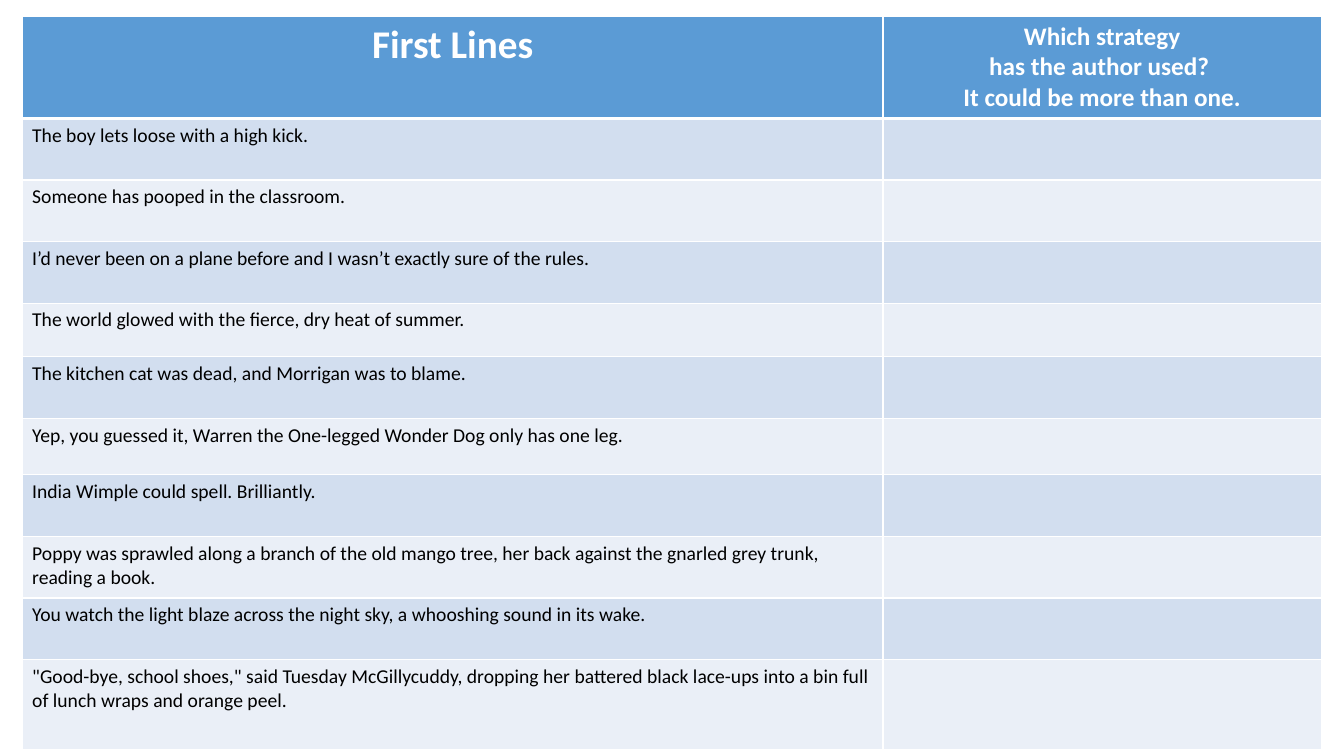
from dataclasses import dataclass

import pptx
import pptx.dml.color
import pptx.enum.text
import pptx.oxml
import pptx.oxml.ns
import pptx.table
import pptx.util

Pt = pptx.util.Pt


@dataclass(frozen=True)
class Theme:
    font: str = "Calibri"
    head: str = "5B9BD5"
    bands: tuple[str, str] = ("D2DEEF", "EAEFF7")
    white: str = "FFFFFF"
    black: str = "000000"
    title: int = 28
    label: int = 18
    body: int = 14
    thin: int = 1
    thick: int = 3


@dataclass(frozen=True)
class Style:
    fill: str
    ink: str
    size: int
    bold: bool = False
    center: bool = False
    top: int = 1
    bottom: int = 1


@dataclass(frozen=True)
class Line:
    text: str
    height: float = 44


THEME = Theme()
LEFT, TOP = 15.8, 11.5
WIDTHS = (615, 313)
HEAD = 73

TITLE = "First Lines"
PROMPT = "Which strategy\nhas the author used? \nIt could be more than one."
LINES = (
    Line("The boy lets loose with a high kick."),
    Line("Someone has pooped in the classroom."),
    Line("I’d never been on a plane before and I wasn’t exactly sure of the rules."),
    Line("The world glowed with the fierce, dry heat of summer.", 38.3),
    Line("The kitchen cat was dead, and Morrigan was to blame."),
    Line("Yep, you guessed it, Warren the One-legged Wonder Dog only has one leg.", 40.3),
    Line("India Wimple could spell. Brilliantly."),
    Line("Poppy was sprawled along a branch of the old mango tree, "
         "her back against the gnarled grey trunk, reading a book."),
    Line("You watch the light blaze across the night sky, a whooshing sound in its wake."),
    Line('"Good-bye, school shoes," said Tuesday McGillycuddy, dropping her battered '
         "black lace-ups into a bin full of lunch wraps and orange peel.", 64),
)


def color(code: str) -> pptx.dml.color.RGBColor:
    return pptx.dml.color.RGBColor.from_string(code)


def edge(cell: pptx.table._Cell, side: str, width: int) -> None:
    """Add one white border to a cell."""
    space = pptx.oxml.ns.nsdecls("a")
    cell._tc.get_or_add_tcPr().append(pptx.oxml.parse_xml(
        f'<a:ln{side} {space} w="{int(Pt(width))}"><a:solidFill>'
        f'<a:srgbClr val="{THEME.white}"/></a:solidFill></a:ln{side}>'))


def write(cell: pptx.table._Cell, text: str, style: Style) -> None:
    """Frame, fill and letter one cell."""
    sides = {"L": THEME.thin, "R": THEME.thin, "T": style.top, "B": style.bottom}
    for side, width in sides.items():
        edge(cell, side, width)
    cell.fill.solid()
    cell.fill.fore_color.rgb = color(style.fill)
    if not text:
        return
    cell.text = text
    for para in cell.text_frame.paragraphs:
        if style.center:
            para.alignment = pptx.enum.text.PP_ALIGN.CENTER
        para.font.name = THEME.font
        para.font.size = Pt(style.size)
        para.font.bold = style.bold
        para.font.color.rgb = color(style.ink)


def main() -> None:
    deck = pptx.Presentation()
    deck.slide_width, deck.slide_height = Pt(960), Pt(540)
    slide = deck.slides.add_slide(deck.slide_layouts[6])

    # Table grid
    heights = [HEAD] + [line.height for line in LINES]
    grid = slide.shapes.add_table(
        len(heights), len(WIDTHS), Pt(LEFT), Pt(TOP),
        Pt(sum(WIDTHS)), Pt(sum(heights))).table
    for column, width in zip(grid.columns, WIDTHS):
        column.width = Pt(width)
    for row, height in zip(grid.rows, heights):
        row.height = Pt(height)

    # Header row
    for col, (text, size) in enumerate(((TITLE, THEME.title), (PROMPT, THEME.label))):
        write(grid.cell(0, col), text,
              Style(THEME.head, THEME.white, size, True, True, bottom=THEME.thick))

    # Banded rows with an empty answer column
    for index, line in enumerate(LINES):
        style = Style(THEME.bands[index % 2], THEME.black, THEME.body,
                      top=THEME.thin if index else THEME.thick)
        for col, text in enumerate((line.text, "")):
            write(grid.cell(index + 1, col), text, style)

    deck.save("out.pptx")


if __name__ == "__main__":
    main()
